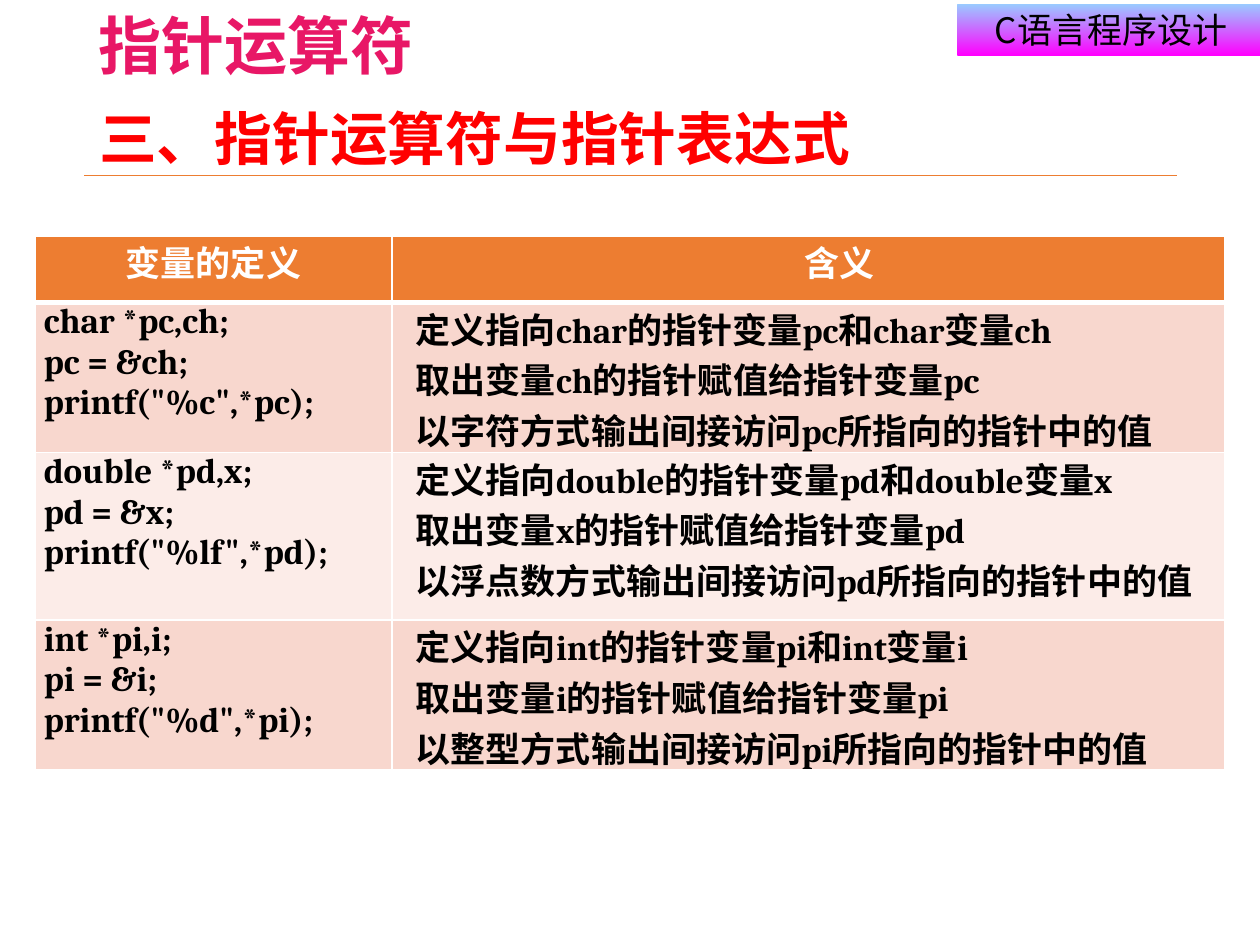
from lxml.etree import SubElement
from pptx import Presentation
from pptx.dml.color import RGBColor
from pptx.enum.shapes import MSO_CONNECTOR, MSO_SHAPE
from pptx.enum.text import MSO_ANCHOR, MSO_AUTO_SIZE, PP_ALIGN
from pptx.oxml import parse_xml
from pptx.oxml.ns import nsdecls, qn
from pptx.util import Pt


def color(hex_string):
    return RGBColor.from_string(hex_string)


def add_run(paragraph, text, size, font, hex_color, bold=True, east_asian="Noto Sans CJK SC"):
    run = paragraph.add_run()
    run.text = text
    run.font.size = Pt(size)
    run.font.bold = bold
    run.font.color.rgb = color(hex_color)
    run.font.name = font
    SubElement(run.font._element, qn("a:ea")).set("typeface", east_asian)


presentation = Presentation()
presentation.slide_width, presentation.slide_height = Pt(720), Pt(540)
slide = presentation.slides.add_slide(presentation.slide_layouts[5])

# Course banner
banner = slide.shapes.add_shape(MSO_SHAPE.RECTANGLE, Pt(547), Pt(2.2), Pt(176), Pt(29.5))
banner.shadow.inherit = False
banner.line.fill.background()
banner.fill.gradient()
banner.fill.gradient_angle = 270
for stop, hex_color in zip(banner.fill.gradient_stops, ("99CCFF", "FF00FF")):
    stop.color.rgb = color(hex_color)
banner.text_frame.vertical_anchor = MSO_ANCHOR.MIDDLE
paragraph = banner.text_frame.paragraphs[0]
paragraph.alignment = PP_ALIGN.CENTER
add_run(paragraph, "C语言程序设计", 20, "Noto Sans CJK SC", "000000", bold=False)

# Chapter heading
heading = slide.shapes.add_textbox(Pt(14.4), Pt(0), Pt(263.5), Pt(29.5))
heading.text_frame.word_wrap = False
paragraph = heading.text_frame.paragraphs[0]
paragraph.alignment = PP_ALIGN.CENTER
add_run(paragraph, "指针运算符", 36, "Noto Sans CJK JP", "E81766", east_asian="Noto Sans CJK JP")

# Rule under the title
rule = slide.shapes.add_connector(MSO_CONNECTOR.STRAIGHT, Pt(48.2), Pt(100), Pt(672.5), Pt(100))
rule.line.color.rgb = color("ED7D31")
rule.line.width = Pt(0.25)
SubElement(rule._element.spPr, qn("a:effectLst"))

# Title
title = slide.shapes.title
title.left, title.top, title.width, title.height = Pt(49.5), Pt(28.8), Pt(621), Pt(104.4)
title.text_frame.auto_size = MSO_AUTO_SIZE.NONE
title.text_frame.vertical_anchor = MSO_ANCHOR.MIDDLE
paragraph = title.text_frame.paragraphs[0]
paragraph.alignment = PP_ALIGN.LEFT
paragraph.line_spacing = 0.9
add_run(paragraph, "三、指针运算符与指针表达式", 33, "Calibri", "FF0000")

# Table: each cell is a list of lines
rows = [
    (["变量的定义"], ["含义"]),
    (["char *pc,ch;", "pc = &ch;", 'printf("%c",*pc);'],
     ["定义指向char的指针变量pc和char变量ch",
      "取出变量ch的指针赋值给指针变量pc",
      "以字符方式输出间接访问pc所指向的指针中的值"]),
    (["double *pd,x;", "pd = &x;", 'printf("%lf",*pd);'],
     ["定义指向double的指针变量pd和double变量x",
      "取出变量x的指针赋值给指针变量pd",
      "以浮点数方式输出间接访问pd所指向的指针中的值"]),
    (["int *pi,i;", "pi = &i;", 'printf("%d",*pi);'],
     ["定义指向int的指针变量pi和int变量i",
      "取出变量i的指针赋值给指针变量pi",
      "以整型方式输出间接访问pi所指向的指针中的值"]),
]
row_fills = ["ED7D31", "F8D7CE", "FCECE8", "F8D7CE"]
table = slide.shapes.add_table(4, 2, Pt(20), Pt(134.8), Pt(680), Pt(305)).table
for column, width in zip(table.columns, (204, 476)):
    column.width = Pt(width)
for row, height in zip(table.rows, (38, 85.7, 95.8, 85.7)):
    row.height = Pt(height)

for row_index, row_texts in enumerate(rows):
    is_header = row_index == 0
    for column_index, lines in enumerate(row_texts):
        cell = table.cell(row_index, column_index)
        cell.margin_left = cell.margin_right = Pt(5)
        cell.margin_top = cell.margin_bottom = Pt(0)
        cell.fill.solid()
        cell.fill.fore_color.rgb = color(row_fills[row_index])

        # White borders, thicker below the header
        for position, side in enumerate("LRTB"):
            below_header = (row_index, side) in ((0, "B"), (1, "T"))
            width = Pt(3 if below_header else 1)
            cell._tc.tcPr.insert(position, parse_xml(
                f'<a:ln{side} {nsdecls("a")} w="{width}"><a:solidFill>'
                f'<a:srgbClr val="FFFFFF"/></a:solidFill></a:ln{side}>'))

        for line_index, line in enumerate(lines):
            frame = cell.text_frame
            paragraph = frame.paragraphs[0] if line_index == 0 else frame.add_paragraph()
            paragraph.alignment = PP_ALIGN.CENTER if is_header else PP_ALIGN.LEFT
            if column_index == 1:
                indent = Pt(36 if is_header else 8.6)
                paragraph._p.get_or_add_pPr().set("indent", str(indent))
            add_run(paragraph, line, 20, "Cambria", "FFFFFF" if is_header else "000000")

presentation.save("out.pptx")
